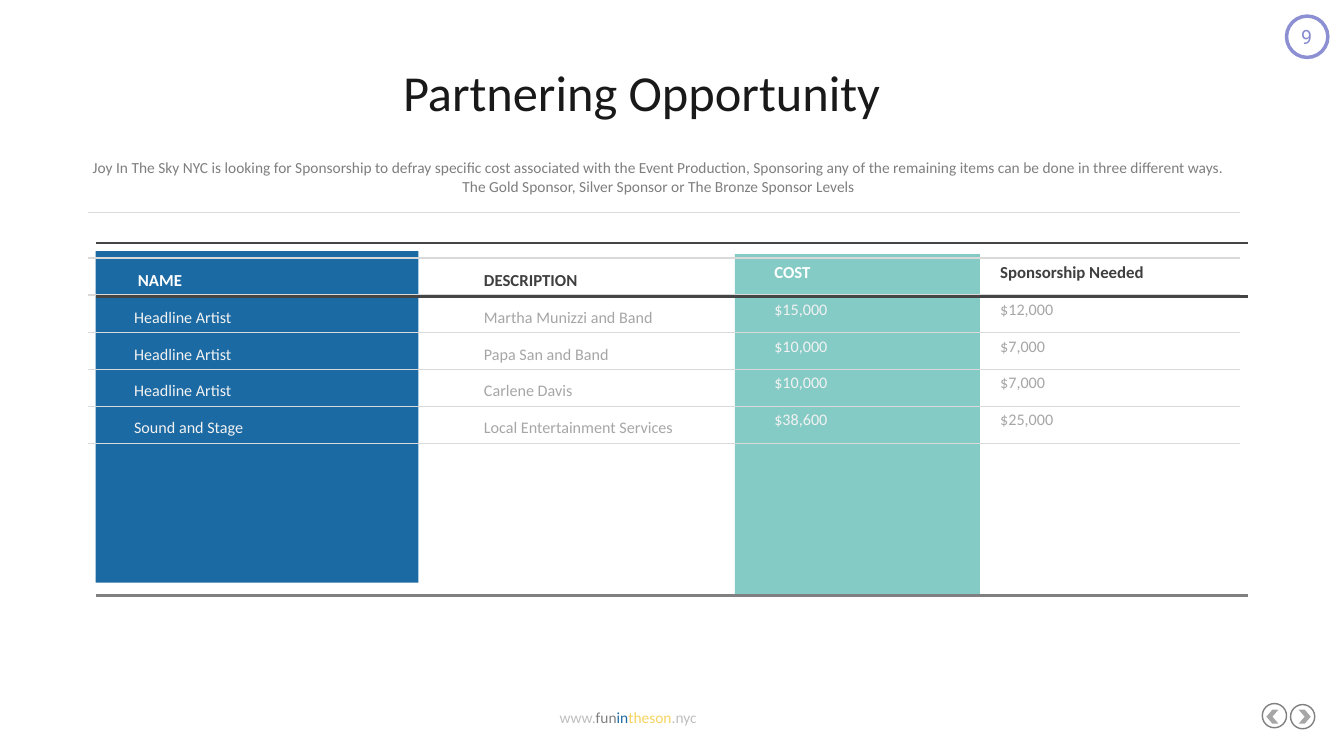
"""Build the Partnering Opportunity slide with its sponsorship cost columns."""
from dataclasses import dataclass

from lxml import etree
from pptx import Presentation
from pptx.dml.color import RGBColor
from pptx.enum.shapes import MSO_CONNECTOR, MSO_SHAPE
from pptx.enum.text import MSO_ANCHOR, PP_ALIGN
from pptx.oxml.ns import qn
from pptx.util import Inches, Pt

STRAIGHT = MSO_CONNECTOR.STRAIGHT
OVAL, CHEVRON, RECTANGLE = MSO_SHAPE.OVAL, MSO_SHAPE.CHEVRON, MSO_SHAPE.RECTANGLE
CENTER, LEFT = PP_ALIGN.CENTER, PP_ALIGN.LEFT
TOP, MIDDLE = MSO_ANCHOR.TOP, MSO_ANCHOR.MIDDLE


@dataclass(frozen=True)
class Theme:
    font: str = "Calibri"
    number_font: str = "Roboto"
    title: str = "191919"
    intro: str = "7E7E7E"
    blue: str = "1B6AA3"
    teal: str = "84CBC5"
    yellow: str = "F8D35E"
    white: str = "FFFFFF"
    light_text: str = "F2F2F2"
    dark_text: str = "3F3F3F"
    arrow: str = "A6A6A6"
    gray: str = "808080"
    pale: str = "BFBFBF"
    row_rule: str = "D9D9D9"
    heavy_rule: str = "454545"
    badge_ring: str = "8C90D3"
    badge_number: str = "868AD1"
    title_size: float = 36
    number_size: float = 14
    header_size: float = 12
    body_size: float = 11.5
    small_size: float = 11


theme = Theme()
presentation = Presentation()
presentation.slide_width = Inches(13.33)
presentation.slide_height = Inches(7.5)
slide = presentation.slides.add_slide(presentation.slide_layouts[6])


def add_flat_shape(kind, box, fill=None, line=None, width=1, rotation=0):
    shape = slide.shapes.add_shape(kind, *map(Inches, box))
    shape.shadow.inherit = False
    shape.rotation = rotation
    if fill:
        shape.fill.solid()
        shape.fill.fore_color.rgb = RGBColor.from_string(fill)
    else:
        shape.fill.background()
    if line:
        shape.line.color.rgb = RGBColor.from_string(line)
        shape.line.width = Pt(width)
    else:
        shape.line.fill.background()


def add_text(box, paragraphs, align=LEFT, anchor=TOP, insets=(0.1, 0.05, 0.1, 0.05),
             spacing=None, font=theme.font):
    frame = slide.shapes.add_textbox(*map(Inches, box)).text_frame
    frame.word_wrap = True
    frame.vertical_anchor = anchor
    (frame.margin_left, frame.margin_top,
     frame.margin_right, frame.margin_bottom) = map(Inches, insets)
    for index, runs in enumerate(paragraphs):
        paragraph = frame.add_paragraph() if index else frame.paragraphs[0]
        paragraph.alignment = align
        paragraph.line_spacing = spacing
        for text, size, color, bold in runs:
            run = paragraph.add_run()
            run.text = text
            run.font.name = font
            run.font.size = Pt(size)
            run.font.bold = bold
            run.font.color.rgb = RGBColor.from_string(color)


address = [("www.", theme.pale), ("fun", theme.gray), ("in", theme.blue),
           ("theson", theme.yellow), (".nyc", theme.pale)]
add_text((0.77, 6.98, 10.92, 0.39),
         [[(text, theme.small_size, color, False) for text, color in address]], CENTER)

for ring_left, ring_top, arrow_left, rotation in [(12.8, 6.99, 12.88, 0),
                                                  (12.52, 6.98, 12.56, 180)]:
    add_flat_shape(OVAL, (ring_left, ring_top, 0.24, 0.24), line=theme.gray)
    add_flat_shape(CHEVRON, (arrow_left, 7.04, 0.12, 0.14), theme.arrow, rotation=rotation)

add_flat_shape(OVAL, (12.76, 0.16, 0.41, 0.41), line=theme.badge_ring, width=2.5)
add_text((12.71, 0.2, 0.5, 0.34),
         [[("9", theme.number_size, theme.badge_number, False)]], CENTER,
         font=theme.number_font)

add_flat_shape(RECTANGLE, (7.29, 2.52, 2.43, 3.39), theme.teal)
add_flat_shape(RECTANGLE, (0.95, 2.49, 3.2, 3.29), theme.blue)

row_tops = [2.11] + [2.56 + 0.368 * row for row in range(6)]
rules = [(0.87, top, theme.row_rule, 1) for top in row_tops]
rules += [(0.95, 2.41, theme.heavy_rule, 2), (0.95, 2.94, theme.heavy_rule, 2),
          (0.95, 5.91, theme.gray, 2)]
for left, top, color, width in rules:
    rule = slide.shapes.add_connector(STRAIGHT, Inches(left), Inches(top),
                                      Inches(left + 11.43), Inches(top))
    rule.line.color.rgb = RGBColor.from_string(color)
    rule.line.width = Pt(width)
    etree.SubElement(rule._element.spPr, qn("a:effectLst"))

columns = [
    ((1.33, 1.76, 1.89, 3.31), theme.white, theme.light_text, " NAME",
     ["Headline Artist", "Headline Artist", "Headline Artist", "Sound and Stage"]),
    ((4.8, 1.76, 1.89, 3.31), theme.dark_text, theme.arrow, "DESCRIPTION",
     ["Martha Munizzi and Band", "Papa San and Band", "Carlene Davis",
      "Local Entertainment Services"]),
    ((7.68, 1.68, 1.55, 3.31), theme.white, theme.light_text, "COST",
     ["$15,000", "$10,000", "$10,000", "$38,600"]),
    ((9.92, 1.68, 1.55, 3.31), theme.dark_text, theme.arrow, "Sponsorship Needed",
     ["$12,000", "$7,000", "$7,000", "$25,000"]),
]
for box, header_color, body_color, header, entries in columns:
    paragraphs = [[(header, theme.header_size, header_color, True)]]
    paragraphs += [[(entry, theme.body_size, body_color, False)] for entry in entries]
    add_text(box, paragraphs, anchor=MIDDLE, insets=(0, 0, 0, 0), spacing=1.9)

intro = ("Joy In The Sky NYC is looking for Sponsorship to defray specific cost associated "
         "with the Event Production, Sponsoring any of the remaining items can be done in "
         "three different ways. The Gold Sponsor, Silver Sponsor or The Bronze Sponsor Levels")
add_text((0.7, 1.52, 11.73, 0.46), [[(intro, theme.small_size, theme.intro, False)]],
         CENTER, insets=(0.1, 0.05, 0.16, 0.04))
add_text((3.54, 0.56, 5.65, 0.71),
         [[("Partnering Opportunity", theme.title_size, theme.title, False)]], CENTER)

presentation.save("out.pptx")
